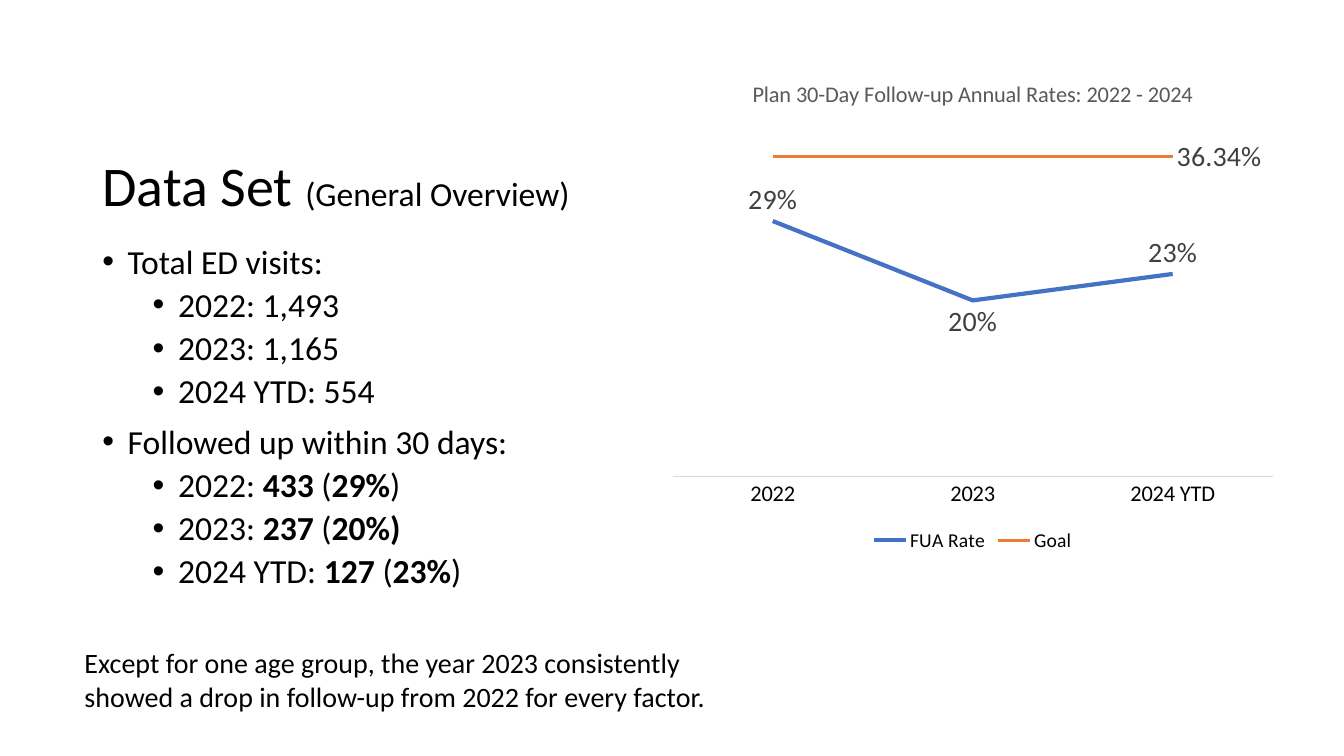
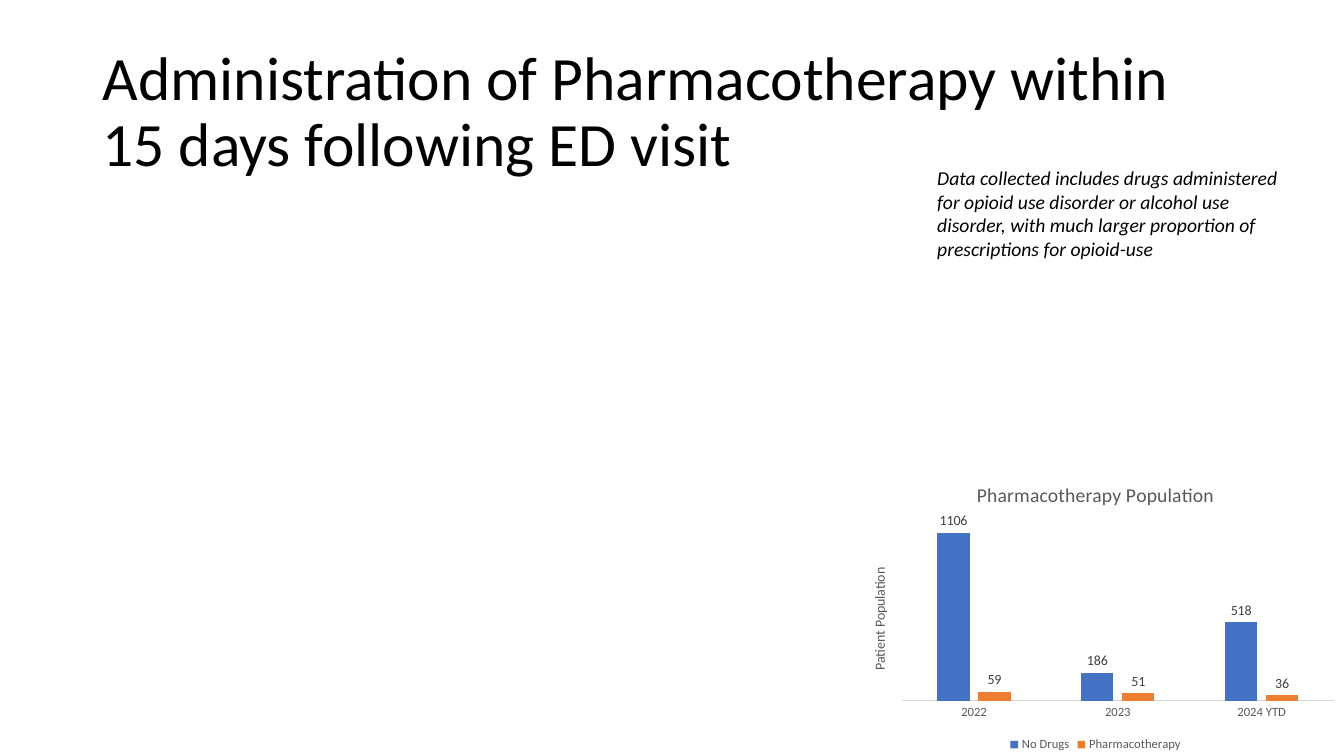
from lxml import etree
from pptx import Presentation
from pptx import util as u
from pptx.chart.data import CategoryChartData
from pptx.dml.color import RGBColor
from pptx.enum import chart as ch
from pptx.enum import text
from pptx.oxml import parse_xml
from pptx.oxml.ns import nsdecls, qn

COLORS = {"ink": "000000", "grey": "595959", "label": "404040",
          "axis": "D9D9D9", "blue": "4472C4", "orange": "ED7D31"}
FONT = "Calibri"
YEARS = ["2022", "2023", "2024 YTD"]
LABEL = ch.XL_LABEL_POSITION


def rgb(name):
    return RGBColor.from_string(COLORS[name])


def set_font(font, size, color="ink", **fmt):
    font.color.rgb = rgb(color)
    for key, value in {"name": FONT, "size": u.Pt(size), **fmt}.items():
        setattr(font, key, value)


class Deck:
    """Holds the shared style and the current slide."""

    def __init__(self):
        self.prs = Presentation()
        self.prs.slide_width, self.prs.slide_height = u.Cm(33.87), u.Cm(19.05)
        self.s = None

    def slide(self):
        self.s = self.prs.slides.add_slide(self.prs.slide_layouts[5])

    def title(self, box, runs, anchor):
        sp = self.s.shapes.title
        sp.left, sp.top, sp.width, sp.height = map(u.Cm, box)
        tf = sp.text_frame
        frame = {"word_wrap": True, "vertical_anchor": anchor,
                 "auto_size": text.MSO_AUTO_SIZE.NONE}
        for key, value in frame.items():
            setattr(tf, key, value)
        p = tf.paragraphs[0]
        p.alignment, p.line_spacing = text.PP_ALIGN.LEFT, 0.9
        for words, size in runs:
            r = p.add_run()
            r.text = words
            set_font(r.font, size)

    def textbox(self, box):
        tf = self.s.shapes.add_textbox(*map(u.Cm, box)).text_frame
        tf.word_wrap = True
        return tf

    def note(self, box, words, size, **fmt):
        r = self.textbox(box).paragraphs[0].add_run()
        r.text = words
        set_font(r.font, size, **fmt)

    def bullets(self, box, items, size):
        """Items are (level, text); words between asterisks are bold."""
        tf = self.textbox(box)
        for i, (level, line) in enumerate(items):
            p = tf.add_paragraph() if i else tf.paragraphs[0]
            p.level, p.line_spacing = level, 0.9
            p.space_before = u.Pt(5 if level else 10)
            pPr = p._p.get_or_add_pPr()
            pPr.set("marL", str(u.Cm(1.91 if level else 0.64)))
            pPr.set("indent", str(u.Cm(-0.64)))
            etree.SubElement(pPr, qn("a:buFont"), typeface="Arial")
            etree.SubElement(pPr, qn("a:buChar"), char="•")
            for j, words in enumerate(line.split("*")):
                if words:
                    r = p.add_run()
                    r.text = words
                    set_font(r.font, size, bold=j % 2 == 1)

    def chart(self, kind, box, title, series, sizes, top, plot, tick_color):
        """Series are (name, values, number format); plot is x, y, w, h."""
        data = CategoryChartData()
        data.categories = YEARS
        for name, values, fmt in series:
            data.add_series(name, values, number_format=fmt)
        chart = self.s.shapes.add_chart(kind, *map(u.Cm, box), data).chart
        set_font(chart.font, 10)
        # Title and legend
        tf = chart.chart_title.text_frame
        tf.text = title
        set_font(tf.paragraphs[0].runs[0].font, sizes["title"], "grey", bold=False)
        chart.has_legend = True
        chart.legend.position = ch.XL_LEGEND_POSITION.BOTTOM
        chart.legend.include_in_layout = False
        set_font(chart.legend.font, sizes["legend"], tick_color)
        # Axes
        cat, val = chart.category_axis, chart.value_axis
        cat.major_tick_mark = ch.XL_TICK_MARK.NONE
        cat.format.line.color.rgb = rgb("axis")
        cat.format.line.width = u.Pt(0.75)
        set_font(cat.tick_labels.font, sizes["ticks"], tick_color)
        val.minimum_scale, val.maximum_scale = 0, top
        val.has_major_gridlines = val.visible = False
        # Plot position
        area = chart._chartSpace.chart.plotArea
        for old in area.findall(qn("c:layout")):
            area.remove(old)
        parts = "".join(f'<c:{k} val="{v}"/>' for k, v in zip("xywh", plot))
        area.insert(0, parse_xml(
            f'<c:layout {nsdecls("c")}><c:manualLayout>'
            '<c:layoutTarget val="inner"/><c:xMode val="edge"/><c:yMode val="edge"/>'
            f'{parts}</c:manualLayout></c:layout>'))
        chart.plots[0].vary_by_categories = False
        return chart

    def line_series(self, ser, color, width, positions):
        """Label the points listed in positions (index: side)."""
        ser.smooth = False
        ser.marker.style = ch.XL_MARKER_STYLE.NONE
        ser.format.line.color.rgb = rgb(color)
        ser.format.line.width = u.Pt(width)
        ser.data_labels.show_value = False
        for i, side in positions.items():
            label = ser.points[i].data_label
            set_font(label.font, 20, "label", bold=False)
            label.position = side

    def column_series(self, ser, color):
        ser.format.fill.solid()
        ser.format.fill.fore_color.rgb = rgb(color)
        labels = ser.data_labels
        labels.show_value, labels.position = True, LABEL.OUTSIDE_END
        set_font(labels.font, 10, "label")


def overview(deck):
    deck.slide()
    deck.title((2.33, 2.13, 13.28, 3.51),
               [("Data Set ", 40), ("(General Overview)", 24)],
               text.MSO_ANCHOR.BOTTOM)
    deck.bullets((2.33, 6.05, 13.28, 9.55), [
        (0, "Total ED visits:"),
        (1, "2022: 1,493"),
        (1, "2023: 1,165"),
        (1, "2024 YTD: 554"),
        (0, "Followed up within 30 days:"),
        (1, "2022: *433* (*29%*)"),
        (1, "2023: *237* (*20%)*"),
        (1, "2024 YTD: *127* (*23%*)"),
    ], 24)
    chart = deck.chart(
        ch.XL_CHART_TYPE.LINE, (16.64, 1.5, 15.75, 12.52),
        "Plan 30-Day Follow-up Annual Rates: 2022 - 2024",
        [("FUA Rate", (0.29, 0.2, 0.23), "0%"),
         ("Goal", (0.3634,) * 3, "0.00%")],
        {"title": 16, "legend": 14, "ticks": 16},
        0.4, (0.02, 0.13, 0.96, 0.71), "ink")
    rate, goal = chart.plots[0].series
    deck.line_series(rate, "blue", 3,
                     {0: LABEL.ABOVE, 1: LABEL.BELOW, 2: LABEL.ABOVE})
    deck.line_series(goal, "orange", 2.25, {2: LABEL.RIGHT})
    deck.note((1.88, 16.15, 16.36, 1.96),
              "Except for one age group, the year 2023 consistently showed "
              "a drop in follow-up from 2022 for every factor.", 20)


def pharmacotherapy(deck):
    deck.slide()
    deck.title((2.33, 1.02, 29.21, 3.68),
               [("Administration of Pharmacotherapy within 15 days "
                 "following ED visit", 44)], text.MSO_ANCHOR.MIDDLE)
    deck.note((23.37, 4.06, 9.19, 2.64),
              "Data collected includes drugs administered for opioid use "
              "disorder or alcohol use disorder, with much larger proportion "
              "of prescriptions for opioid-use", 14, italic=True)
    chart = deck.chart(
        ch.XL_CHART_TYPE.COLUMN_CLUSTERED, (21.36, 11.76, 12.5, 7.29),
        "Pharmacotherapy Population",
        [("No Drugs", (1106, 186, 518), "General"),
         ("Pharmacotherapy", (59, 51, 36), "General")],
        {"title": 14, "legend": 9, "ticks": 9},
        1200, (0.11, 0.18, 0.87, 0.63), "grey")
    plot = chart.plots[0]
    plot.gap_width, plot.overlap = 219, -27
    for ser, color in zip(plot.series, ("blue", "orange")):
        deck.column_series(ser, color)
    tf = chart.value_axis.axis_title.text_frame
    tf.text = "Patient Population"
    set_font(tf.paragraphs[0].runs[0].font, 10, "grey", bold=False)
    tf._txBody.bodyPr.set("rot", "-5400000")
    tf._txBody.bodyPr.set("vert", "horz")


def main():
    deck = Deck()
    overview(deck)
    pharmacotherapy(deck)
    deck.prs.save("out.pptx")


if __name__ == "__main__":
    main()
